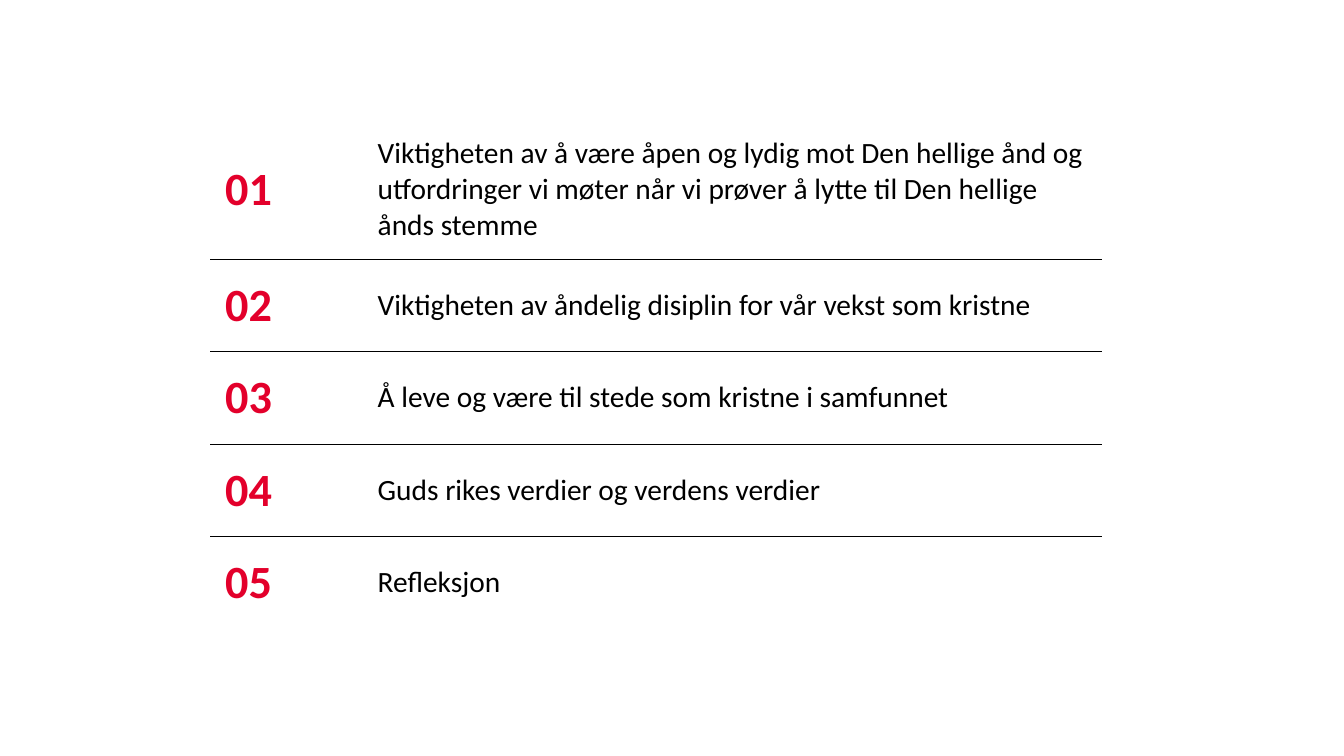
"""Build an agenda slide with five numbered topics in a ruled table."""
from lxml.etree import SubElement
from pptx import Presentation
from pptx.dml.color import RGBColor
from pptx.enum.text import MSO_ANCHOR
from pptx.oxml.ns import qn
from pptx.util import Pt

TOPICS = [
    "Viktigheten av å være åpen og lydig mot Den hellige ånd og utfordringer "
    "vi møter når vi prøver å lytte til Den hellige\nånds stemme",
    "Viktigheten av åndelig disiplin for vår vekst som kristne",
    "Å leve og være til stede som kristne i samfunnet",
    "Guds rikes verdier og verdens verdier",
    "Refleksjon",
]
RED = RGBColor(0xE3, 0x00, 0x2B)
BLACK = RGBColor(0x00, 0x00, 0x00)
FONT = "Calibri"
LEFT, TOP = 150, 85.7
COLUMN_WIDTHS = (109, 528)
TALL_ROW, ROW = 99.5, 66
MARGIN = Pt(10.8)
RULE_WIDTH = Pt(0.5)
PLAIN_STYLE = "{2D5ABB26-0587-4C30-8999-92F81FD0307C}"


def write_cell(cell, text, *, size, color, bold=False):
    cell.margin_left = cell.margin_right = MARGIN
    cell.margin_top = cell.margin_bottom = MARGIN
    cell.vertical_anchor = MSO_ANCHOR.MIDDLE
    cell.text = text
    for paragraph in cell.text_frame.paragraphs:
        for run in paragraph.runs:
            run.font.name = FONT
            run.font.size = Pt(size)
            run.font.bold = bold
            run.font.color.rgb = color


def add_rule(cell, side):
    properties = cell._tc.get_or_add_tcPr()
    line = SubElement(properties, qn(f"a:{side}"), w=str(RULE_WIDTH))
    fill = SubElement(line, qn("a:solidFill"))
    SubElement(fill, qn("a:srgbClr"), val=str(BLACK))


def add_agenda(slide):
    heights = [TALL_ROW] + [ROW] * (len(TOPICS) - 1)
    frame = slide.shapes.add_table(
        len(TOPICS), len(COLUMN_WIDTHS), Pt(LEFT), Pt(TOP),
        Pt(sum(COLUMN_WIDTHS)), Pt(sum(heights)))
    table = frame.table
    table.first_row = table.horz_banding = False
    table._tbl.tblPr.find(qn("a:tableStyleId")).text = PLAIN_STYLE
    for column, width in zip(table.columns, COLUMN_WIDTHS):
        column.width = Pt(width)
    for index, (topic, height) in enumerate(zip(TOPICS, heights)):
        row = table.rows[index]
        row.height = Pt(height)
        number_cell, topic_cell = row.cells
        write_cell(number_cell, f"{index + 1:02}", size=33, color=RED, bold=True)
        write_cell(topic_cell, topic, size=21, color=BLACK)
        for cell in row.cells:
            if index > 0:
                add_rule(cell, "lnT")
            if index < len(TOPICS) - 1:
                add_rule(cell, "lnB")
            cell.fill.background()


def main():
    presentation = Presentation()
    presentation.slide_width, presentation.slide_height = Pt(960), Pt(540)
    slide = presentation.slides.add_slide(presentation.slide_layouts[6])
    add_agenda(slide)
    presentation.save("out.pptx")


if __name__ == "__main__":
    main()
